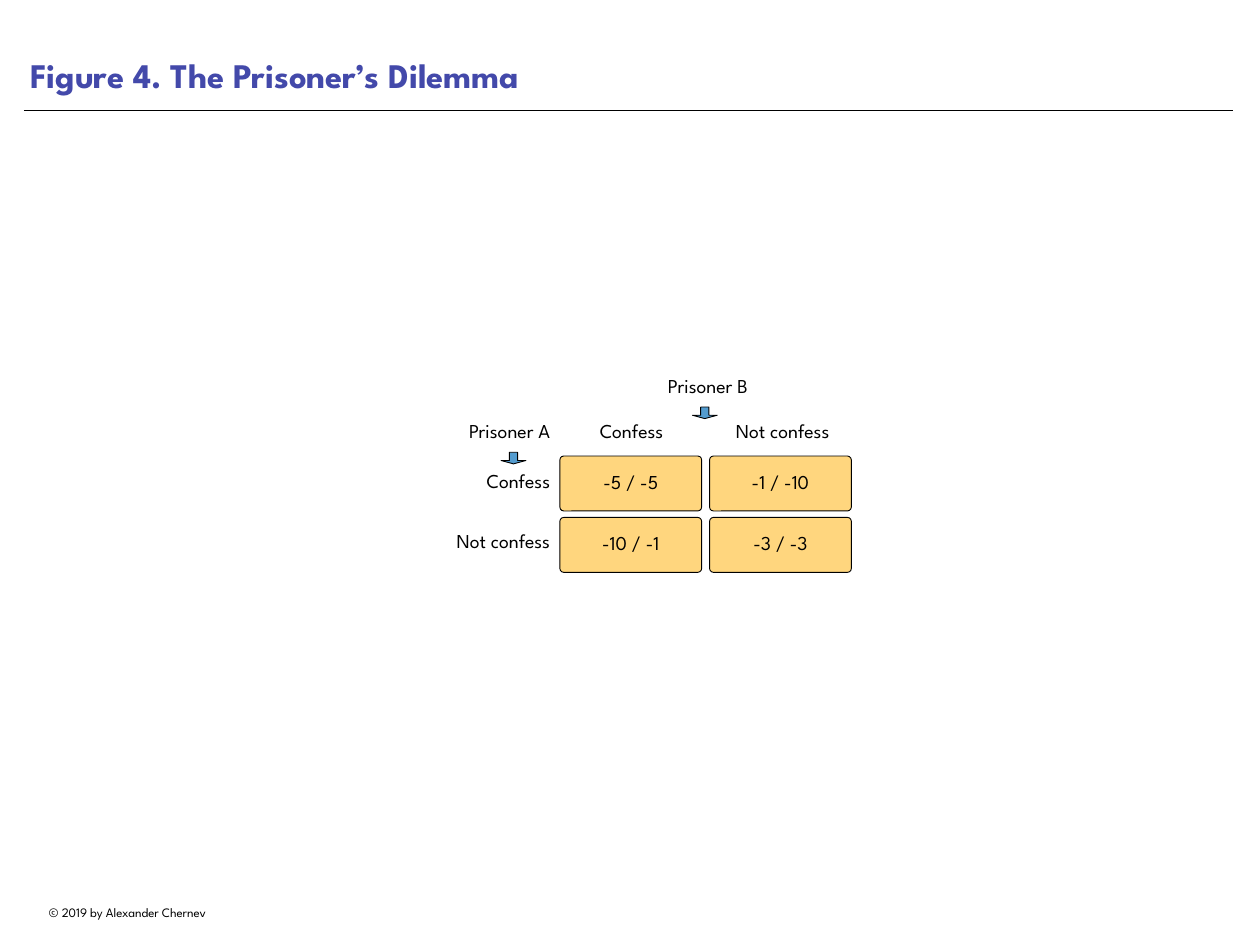
from pptx import Presentation
from pptx.dml.color import RGBColor
from pptx.enum.shapes import MSO_CONNECTOR, MSO_SHAPE as Shape
from pptx.enum.text import MSO_ANCHOR as Anchor, MSO_AUTO_SIZE as Fit, PP_ALIGN as Align
from pptx.oxml.ns import qn
from pptx.util import Pt
from lxml import etree

COLOURS = {"ink": "000000", "title": "4349AA", "cell": "FFD67E", "arrow": "549CCF"}
FONT = "League Spartan"


def colour(name):
    return RGBColor.from_string(COLOURS[name])


def write(box, text, size=16, ink="ink", bold=False, align=Align.CENTER,
          anchor=Anchor.MIDDLE, inset=(2.88, 2.88), spacing=0.8, wrap=True):
    frame = box.text_frame
    frame.word_wrap = wrap
    frame.vertical_anchor = anchor
    frame.margin_left = frame.margin_right = Pt(inset[0])
    frame.margin_top = frame.margin_bottom = Pt(inset[1])
    para = frame.paragraphs[0]
    para.alignment = align
    para.line_spacing = spacing
    span = para.add_run()
    span.text = text
    span.font.name = FONT
    span.font.size = Pt(size)
    span.font.bold = bold
    span.font.color.rgb = colour(ink)


class Figure:
    def __init__(self, page, outline=0.75):
        self.page = page
        self.outline = outline

    def label(self, text, left, top, width, height=25.92, fit=Fit.SHAPE_TO_FIT_TEXT, **style):
        box = self.page.shapes.add_textbox(Pt(left), Pt(top), Pt(width), Pt(height))
        write(box, text, **style)
        box.text_frame.auto_size = fit

    def shape(self, kind, left, top, width, height, fill, adjustments):
        box = self.page.shapes.add_shape(kind, Pt(left), Pt(top), Pt(width), Pt(height))
        box.shadow.inherit = False
        box.fill.solid()
        box.fill.fore_color.rgb = colour(fill)
        box.line.color.rgb = colour("ink")
        box.line.width = Pt(self.outline)
        for index, value in enumerate(adjustments):
            box.adjustments[index] = value
        return box

    def cell(self, text, left, top):
        box = self.shape(Shape.ROUNDED_RECTANGLE, left, top, 115.2, 44.64, "cell", [0.07])
        write(box, text)

    def down_arrow(self, left, top):
        self.shape(Shape.DOWN_ARROW, left, top, 20.2, 9.4, "arrow", [0.33, 0.29])

    def rule(self, left, right, y):
        line = self.page.shapes.add_connector(
            MSO_CONNECTOR.STRAIGHT, Pt(left), Pt(y), Pt(right), Pt(y))
        line.line.color.rgb = colour("ink")
        line.line.width = Pt(0.5)
        etree.SubElement(line._element.spPr, qn("a:effectLst"))


def main():
    deck = Presentation()
    deck.slide_width, deck.slide_height = Pt(1024), Pt(768)
    figure = Figure(deck.slides.add_slide(deck.slide_layouts[6]))

    figure.label("© 2019 by Alexander Chernev", 19.44, 731.5, 168.5, 20.2,
                 size=10.5, anchor=Anchor.TOP, inset=(7.2, 3.6), spacing=1.0, wrap=False)
    figure.rule(19.44, 1002.24, 89.28)
    figure.label("Figure 4. The Prisoner’s Dilemma", 19.44, 0, 982, 82.8, fit=Fit.NONE,
                 size=28, ink="title", bold=True, align=Align.LEFT, anchor=Anchor.BOTTOM,
                 inset=(5.04, 5.04), spacing=1.0)

    payoffs = [["-5 / -5", "-1 / -10"], ["-10 / -1", "-3 / -3"]]
    for row, outcomes in enumerate(payoffs):
        for column, outcome in enumerate(outcomes):
            figure.cell(outcome, 455.04 + 121.68 * column, 370.6 + 49.9 * row)

    for index, choice in enumerate(["Confess", "Not confess"]):
        figure.label(choice, 325.44, 379.44 + 48.96 * index, 124.56, align=Align.RIGHT)
        figure.label(choice, 451.05 + 122.8 * index, 339.12, 124.56)
    figure.label("Prisoner B", 524.16, 302.4, 102.24)
    figure.label("Prisoner A", 365.76, 339.12, 84.24, align=Align.RIGHT)
    figure.down_arrow(407.2, 367.6)
    figure.down_arrow(562.7, 330.8)

    deck.save("out.pptx")


if __name__ == "__main__":
    main()
